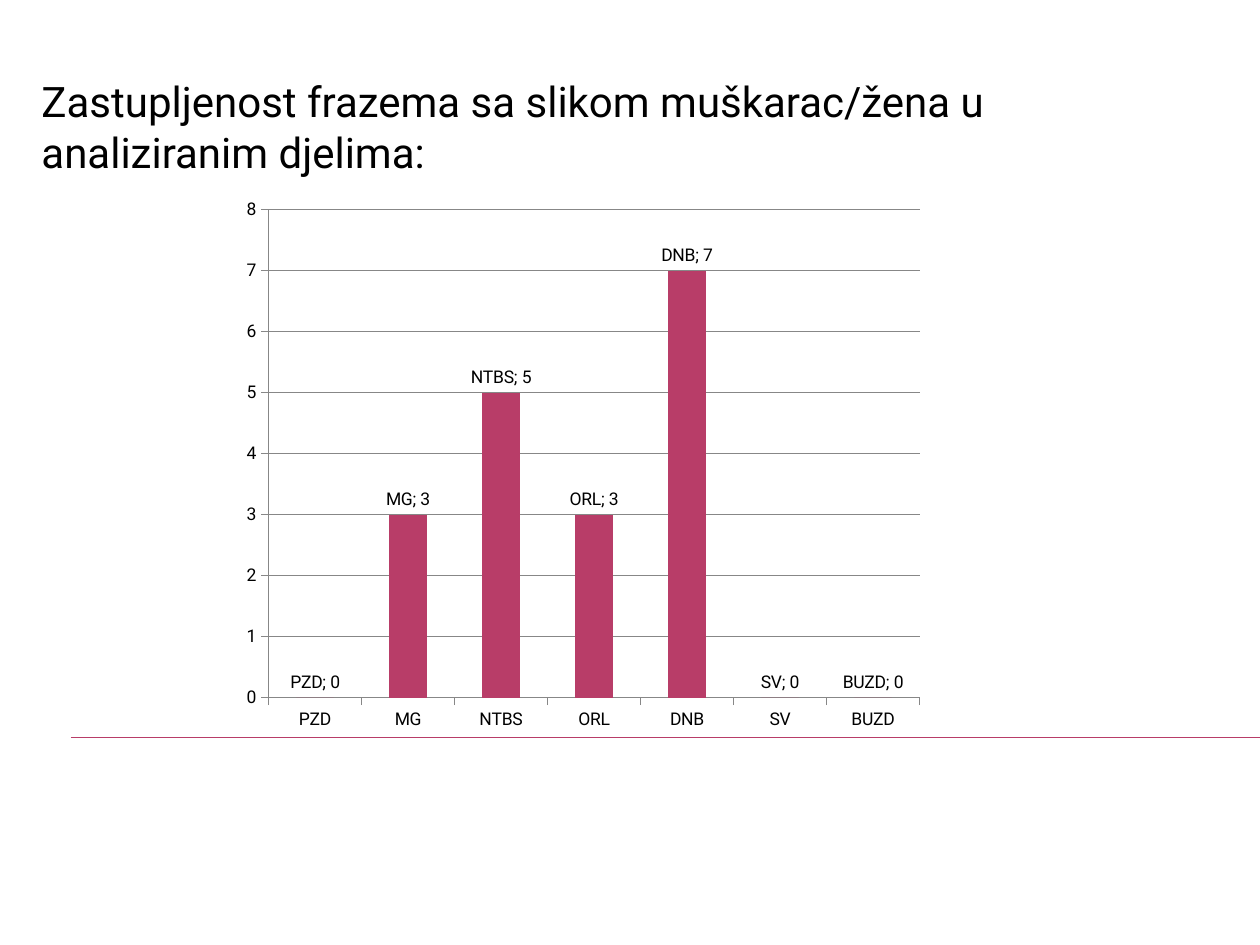
from dataclasses import dataclass

import lxml.etree
import pptx
import pptx.chart.data
import pptx.dml.color
import pptx.enum.chart
import pptx.enum.shapes
import pptx.enum.text
import pptx.oxml
import pptx.oxml.ns
import pptx.util

Pt = pptx.util.Pt
RGB = pptx.dml.color.RGBColor
qn = pptx.oxml.ns.qn


@dataclass(frozen=True)
class Theme:
    font: str = "Roboto"
    ink: RGB = RGB(0, 0, 0)
    accent: RGB = RGB(0xB8, 0x3D, 0x68)
    grid: RGB = RGB(0x87, 0x87, 0x87)
    heading_size: int = 24
    chart_size: int = 10


THEME = Theme()
HEADING = "Zastupljenost frazema sa slikom muškarac/žena u analiziranim djelima:"
PHRASEMES = {"PZD": 0, "MG": 3, "NTBS": 5, "ORL": 3, "DNB": 7, "SV": 0, "BUZD": 0}


def style_font(font, size):
    font.name = THEME.font
    font.size = Pt(size)
    font.bold = False
    font.color.rgb = THEME.ink


def style_line(line, color):
    line.color.rgb = color
    line.width = Pt(0.75)


def add_heading(slide, left, top, width, height):
    heading = slide.shapes.title
    heading.left, heading.top = Pt(left), Pt(top)
    heading.width, heading.height = Pt(width), Pt(height)
    frame = heading.text_frame
    frame.text = HEADING
    frame.word_wrap = True
    frame.auto_size = pptx.enum.text.MSO_AUTO_SIZE.NONE
    frame.vertical_anchor = pptx.enum.text.MSO_ANCHOR.BOTTOM
    paragraph = frame.paragraphs[0]
    paragraph.alignment = pptx.enum.text.PP_ALIGN.LEFT
    style_font(paragraph.runs[0].font, THEME.heading_size)


def add_rule(slide, left, top, width):
    rule = slide.shapes.add_connector(
        pptx.enum.shapes.MSO_CONNECTOR.STRAIGHT,
        Pt(left), Pt(top), Pt(left + width), Pt(top))
    style_line(rule.line, THEME.accent)
    lxml.etree.SubElement(rule._element.spPr, qn("a:effectLst"))


def fix_plot_area(chart, x, y, w, h):
    """Pin the inner plot area to the given fractions of the chart."""
    plot_area = chart._chartSpace.chart.plotArea
    for old in plot_area.findall(qn("c:layout")):
        plot_area.remove(old)
    layout = lxml.etree.Element(qn("c:layout"))
    manual = lxml.etree.SubElement(layout, qn("c:manualLayout"))
    settings = [("layoutTarget", "inner"), ("xMode", "edge"), ("yMode", "edge"),
                ("x", x), ("y", y), ("w", w), ("h", h)]
    for tag, value in settings:
        lxml.etree.SubElement(manual, qn(f"c:{tag}")).set("val", str(value))
    plot_area.insert(0, layout)


def add_phraseme_chart(slide, left, top, width, height):
    counts = pptx.chart.data.CategoryChartData()
    counts.categories = list(PHRASEMES)
    counts.add_series("Series 1", list(PHRASEMES.values()))
    chart = slide.shapes.add_chart(
        pptx.enum.chart.XL_CHART_TYPE.COLUMN_CLUSTERED,
        Pt(left), Pt(top), Pt(width), Pt(height), counts).chart
    chart.has_title = False
    chart.has_legend = False
    style_font(chart.font, THEME.chart_size)
    fix_plot_area(chart, 0.06, 0.07, 0.93, 0.8)

    for axis in (chart.category_axis, chart.value_axis):
        axis.major_tick_mark = pptx.enum.chart.XL_TICK_MARK.OUTSIDE
        axis.minor_tick_mark = pptx.enum.chart.XL_TICK_MARK.NONE
        style_line(axis.format.line, THEME.grid)
    counts_axis = chart.value_axis
    counts_axis.minimum_scale, counts_axis.maximum_scale = 0, 8
    counts_axis.major_unit = 1
    counts_axis.has_major_gridlines = True
    style_line(counts_axis.major_gridlines.format.line, THEME.grid)

    columns = chart.plots[0]
    columns.vary_by_categories = False
    columns.gap_width = 150
    series = columns.series[0]
    series.format.fill.solid()
    series.format.fill.fore_color.rgb = THEME.accent
    labels = series.data_labels
    labels.show_value = True
    labels.show_category_name = True
    labels.position = pptx.enum.chart.XL_LABEL_POSITION.OUTSIDE_END
    style_font(labels.font, THEME.chart_size)
    separator = lxml.etree.Element(qn("c:separator"))
    separator.text = "; "
    labels._element.find(qn("c:showBubbleSize")).addnext(separator)


def main():
    deck = pptx.Presentation()
    deck.slide_width, deck.slide_height = Pt(720), Pt(540)
    slide = deck.slides.add_slide(deck.slide_layouts.get_by_name("Title Only"))
    add_rule(slide, 40.5, 421.5, 679.5)
    add_heading(slide, 16.5, 28, 686, 76.5)
    add_phraseme_chart(slide, 129.5, 95.5, 400, 348.5)
    deck.save("out.pptx")


if __name__ == "__main__":
    main()
